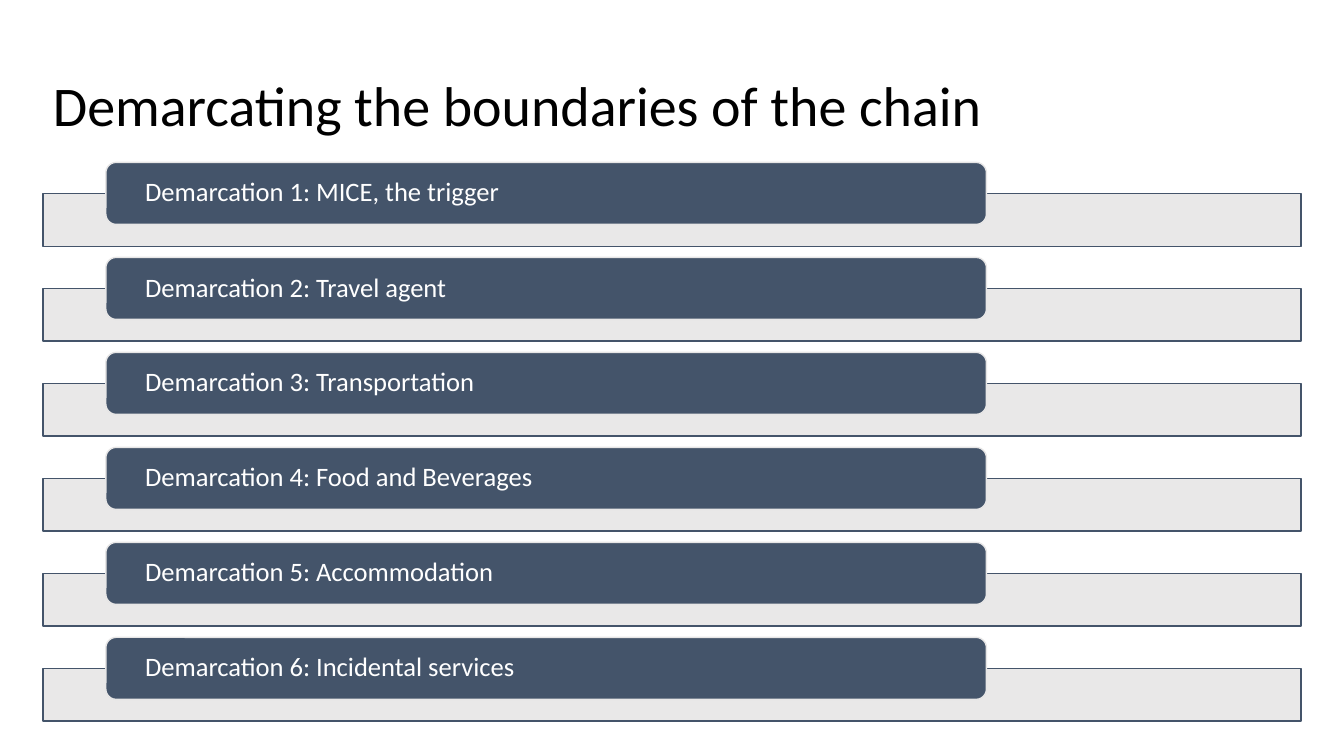
import pptx
import pptx.util
import pptx.dml.color
import pptx.enum.shapes
import pptx.enum.text
import pptx.oxml.ns
import lxml.etree

Pt = pptx.util.Pt
SHAPES = pptx.enum.shapes.MSO_SHAPE
COLOURS = {"title": "000000", "band": "E7E6E6", "tab": "44546A", "label": "FFFFFF"}
FONT = "Calibri"
DEMARCATIONS = [
    "MICE, the trigger",
    "Travel agent",
    "Transportation",
    "Food and Beverages",
    "Accommodation",
    "Incidental services",
]


def colour(name):
    return pptx.dml.color.RGBColor.from_string(COLOURS[name])


def write_text(box, text, size, colour_name, side_inset):
    frame = box.text_frame
    frame.word_wrap = True
    frame.vertical_anchor = pptx.enum.text.MSO_ANCHOR.MIDDLE
    frame.margin_left = frame.margin_right = Pt(side_inset)
    frame.margin_top = frame.margin_bottom = Pt(0)
    frame.text = text
    para = frame.paragraphs[0]
    para.alignment = pptx.enum.text.PP_ALIGN.LEFT
    para.line_spacing = 0.9
    font = para.runs[0].font
    font.name = FONT
    font.size = Pt(size)
    font.color.rgb = colour(colour_name)


def add_panel(page, kind, left, top, width, height, fill, line):
    panel = page.shapes.add_shape(kind, Pt(left), Pt(top), Pt(width), Pt(height))
    panel.shadow.inherit = False
    panel.fill.solid()
    panel.fill.fore_color.rgb = colour(fill)
    panel.line.color.rgb = colour(line)
    panel.line.width = Pt(1)
    return panel


def set_opacity(panel, percent):
    fill_colour = panel.fill._xPr.find(".//" + pptx.oxml.ns.qn("a:srgbClr"))
    alpha = lxml.etree.SubElement(fill_colour, pptx.oxml.ns.qn("a:alpha"))
    alpha.set("val", str(percent * 1000))


def add_title(page, left, top, width, height):
    title = page.shapes.add_textbox(Pt(left), Pt(top), Pt(width), Pt(height))
    write_text(title, "Demarcating the boundaries of the chain", 40, "title", 7.2)


def add_demarcation(page, left, top, width, text):
    band = add_panel(page, SHAPES.RECTANGLE, left, top + 22.1, width, 37.8, "band", "tab")
    set_opacity(band, 90)
    tab = add_panel(page, SHAPES.ROUNDED_RECTANGLE, left + 0.05 * width, top,
                    0.7 * width, 44.3, "tab", "band")
    write_text(tab, text, 19, "label", 25.9)


def add_demarcation_list(page, left, top, width, pitch):
    for index, name in enumerate(DEMARCATIONS):
        add_demarcation(page, left, top + index * pitch, width,
                        f"Demarcation {index + 1}: {name}")


def main():
    deck = pptx.Presentation()
    deck.slide_width = Pt(960)
    deck.slide_height = Pt(540)
    page = deck.slides.add_slide(deck.slide_layouts[6])
    add_title(page, 30.7, 25.2, 898.6, 104.4)
    add_demarcation_list(page, 30.7, 116, 898.6, 67.85)
    deck.save("out.pptx")


if __name__ == "__main__":
    main()
